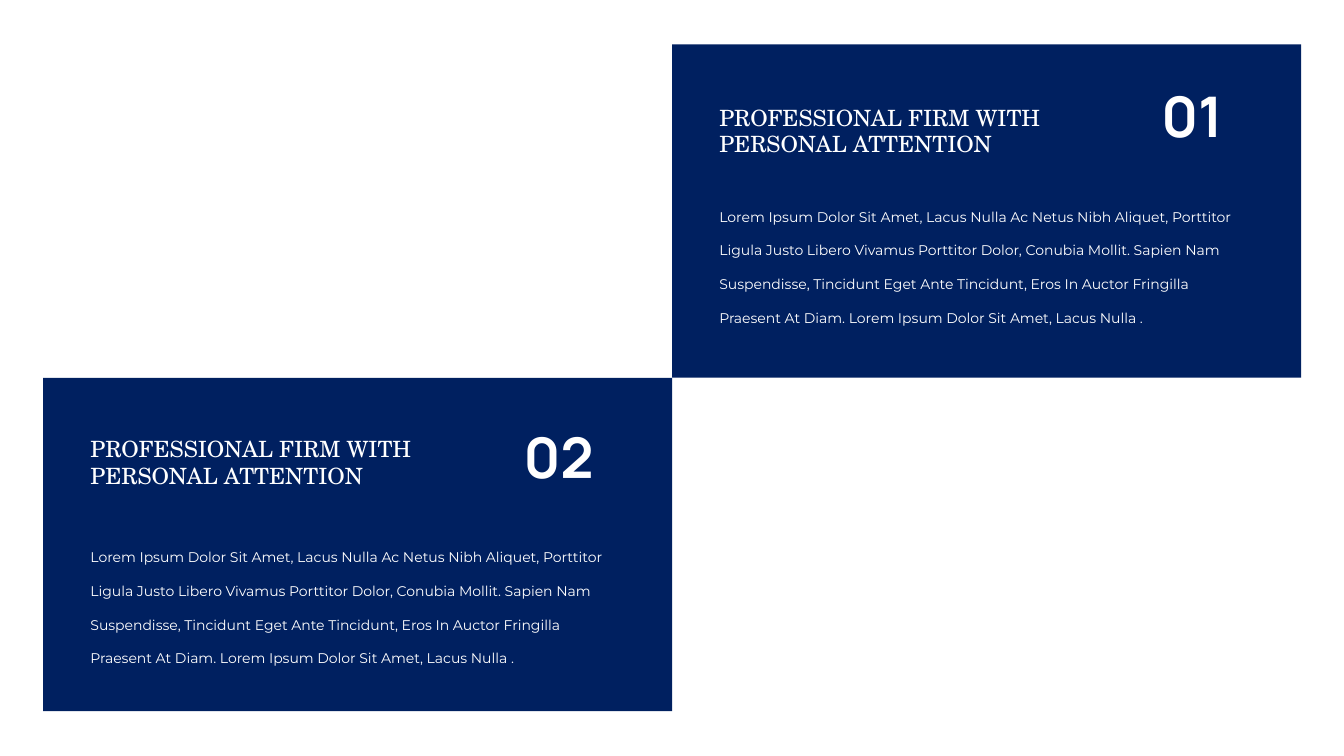
from pptx import Presentation
from pptx.dml.color import RGBColor
from pptx.enum.shapes import MSO_SHAPE
from pptx.enum.text import MSO_AUTO_SIZE, PP_ALIGN
from pptx.util import Cm, Pt

NAVY = RGBColor(0x00, 0x20, 0x60)
WHITE = RGBColor(0xFF, 0xFF, 0xFF)

PANEL_WIDTH, PANEL_HEIGHT = 15.85, 8.4
TEXT_INDENT = 0.94
NUMBER_INDENT = 11.68

HEADING = "PROFESSIONAL FIRM WITH PERSONAL ATTENTION"
BODY = (
    "Lorem Ipsum Dolor Sit Amet, Lacus Nulla Ac Netus Nibh Aliquet, Porttitor "
    "Ligula Justo Libero Vivamus Porttitor Dolor, Conubia Mollit. Sapien Nam "
    "Suspendisse, Tincidunt Eget Ante Tincidunt, Eros In Auctor Fringilla "
    "Praesent At Diam. Lorem Ipsum Dolor Sit Amet, Lacus Nulla ."
)


def add_panel(slide, left, top):
    """Draw the navy background of one card."""
    panel = slide.shapes.add_shape(
        MSO_SHAPE.RECTANGLE, Cm(left), Cm(top), Cm(PANEL_WIDTH), Cm(PANEL_HEIGHT)
    )
    panel.shadow.inherit = False
    panel.fill.solid()
    panel.fill.fore_color.rgb = NAVY
    panel.line.fill.background()


def add_text(slide, text, box, font_name, size, bold=False,
             align=PP_ALIGN.LEFT, line_spacing=None):
    """Place one white paragraph in a wrapping text box."""
    frame = slide.shapes.add_textbox(*map(Cm, box)).text_frame
    frame.word_wrap = True
    frame.auto_size = MSO_AUTO_SIZE.SHAPE_TO_FIT_TEXT
    paragraph = frame.paragraphs[0]
    paragraph.text = text
    paragraph.alignment = align
    paragraph.line_spacing = line_spacing
    paragraph.font.name = font_name
    paragraph.font.size = Pt(size)
    paragraph.font.bold = bold
    paragraph.font.color.rgb = WHITE


def add_card(slide, number, left, top, number_top, heading_top, body_top):
    """Build a numbered card with its heading and body."""
    add_panel(slide, left, top)
    text_left = left + TEXT_INDENT
    add_text(slide, BODY, (text_left, body_top, 13.94, 3.68),
             "Montserrat", 10, line_spacing=2.0)
    add_text(slide, number, (left + NUMBER_INDENT, number_top, 2.44, 1.96),
             "Manrope", 40, bold=True, align=PP_ALIGN.RIGHT)
    add_text(slide, HEADING, (text_left, heading_top, 11.02, 1.63),
             "TeX Gyre Schola", 16)


def main():
    """Create the slide with two diagonal cards."""
    presentation = Presentation()
    presentation.slide_width = Cm(33.87)
    presentation.slide_height = Cm(19.05)
    slide = presentation.slides.add_slide(presentation.slide_layouts[6])
    left, top = 1.09, 1.12
    add_card(slide, "01", left + PANEL_WIDTH, top,
             number_top=1.93, heading_top=2.49, body_top=4.7)
    add_card(slide, "02", left, top + PANEL_HEIGHT,
             number_top=10.52, heading_top=10.85, body_top=13.28)
    presentation.save("out.pptx")


if __name__ == "__main__":
    main()
